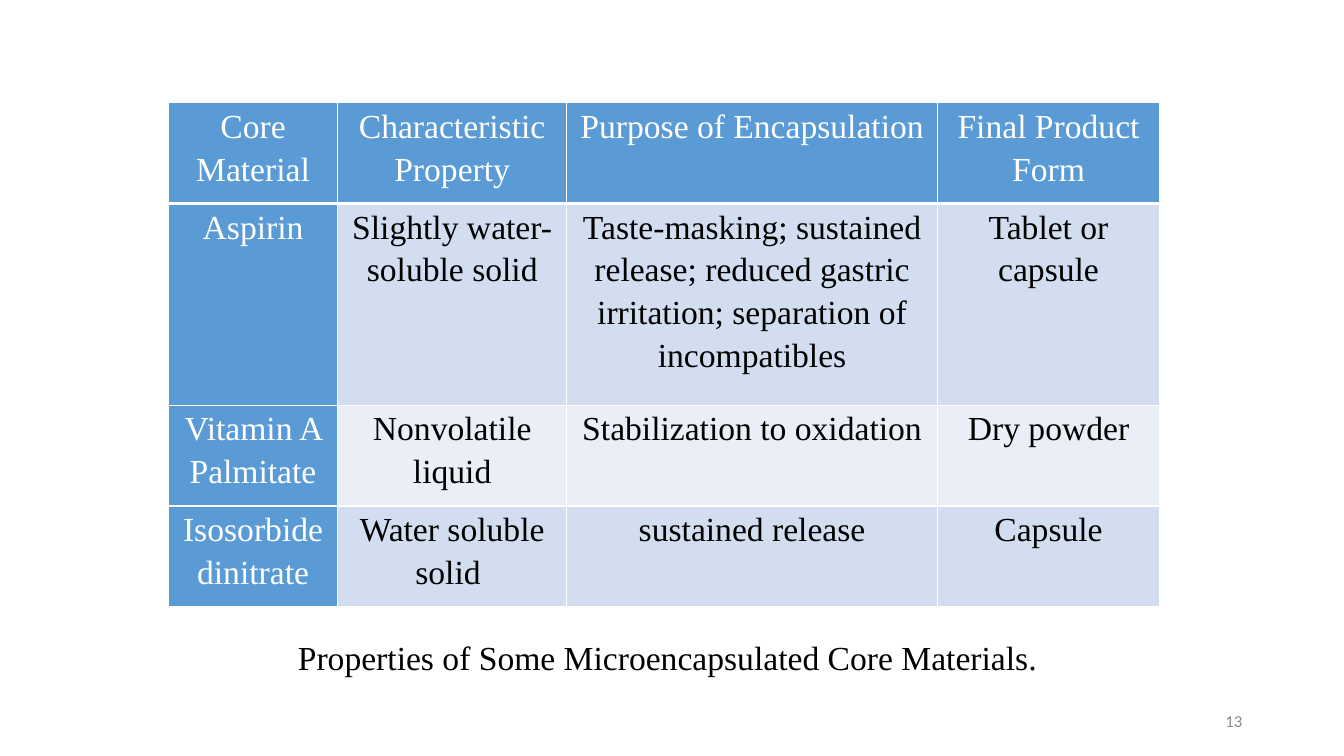
from dataclasses import dataclass

from lxml.etree import SubElement
from pptx import Presentation
from pptx.dml.color import RGBColor
from pptx.enum.text import MSO_ANCHOR, PP_ALIGN
from pptx.oxml.ns import qn
from pptx.util import Inches, Pt

COLORS = {
    "white": "FFFFFF",
    "black": "000000",
    "grey": "8C8C8C",
    "header": "5B9BD5",
    "odd_row": "D2DEEF",
    "even_row": "EAEFF7",
}
SERIF = "Times New Roman"
COLUMN_WIDTHS = [1.68, 2.27, 3.68, 2.2]
ROW_HEIGHTS = [1, 2, 1, 1]
MATERIALS = [
    ["Core Material", "Characteristic Property", "Purpose of Encapsulation", "Final Product Form"],
    [
        "Aspirin",
        "Slightly water- soluble solid",
        "Taste-masking; sustained release; reduced gastric irritation; separation of incompatibles",
        "Tablet or capsule",
    ],
    ["Vitamin A Palmitate", "Nonvolatile liquid", "Stabilization to oxidation", "Dry powder"],
    ["Isosorbide dinitrate", "Water soluble solid ", "sustained release", "Capsule"],
]


@dataclass
class Label:
    text: str
    left: float
    top: float
    width: float
    height: float
    size: float
    font: str
    color: str
    align: PP_ALIGN
    anchor: MSO_ANCHOR


LABELS = [
    Label("13", 9.42, 6.95, 3, 0.4, 12, "Calibri", "grey", PP_ALIGN.RIGHT, MSO_ANCHOR.MIDDLE),
    Label("Properties of Some Microencapsulated Core Materials.", 1.62, 6.27, 10, 0.5,
          24, SERIF, "black", PP_ALIGN.CENTER, MSO_ANCHOR.TOP),
]


def write(frame, text: str, size: float, font: str, color: str, align: PP_ALIGN):
    frame.text = text
    frame.word_wrap = True
    para = frame.paragraphs[0]
    para.alignment = align
    span = para.runs[0]
    span.font.size = Pt(size)
    span.font.name = font
    span.font.bold = False
    span.font.color.rgb = RGBColor.from_string(COLORS[color])
    return para


def add_label(page, label: Label) -> None:
    box = page.shapes.add_textbox(
        Inches(label.left), Inches(label.top), Inches(label.width), Inches(label.height)
    )
    box.text_frame.vertical_anchor = label.anchor
    write(box.text_frame, label.text, label.size, label.font, label.color, label.align)


def add_borders(cell, bottom_width: float) -> None:
    properties = cell._tc.get_or_add_tcPr()
    for side, width in (("L", 1), ("R", 1), ("T", 1), ("B", bottom_width)):
        line = SubElement(properties, qn(f"a:ln{side}"), w=str(Pt(width)))
        fill = SubElement(line, qn("a:solidFill"))
        SubElement(fill, qn("a:srgbClr"), val=COLORS["white"])


def cell_fill(row: int, column: int) -> str:
    if row == 0 or column == 0:
        return "header"
    return "odd_row" if row % 2 else "even_row"


def add_materials_table(page) -> None:
    table = page.shapes.add_table(
        len(ROW_HEIGHTS), len(COLUMN_WIDTHS), Inches(1.67), Inches(1.02),
        Inches(sum(COLUMN_WIDTHS)), Inches(sum(ROW_HEIGHTS)),
    ).table
    table.first_col = True
    for column, width in zip(table.columns, COLUMN_WIDTHS):
        column.width = Inches(width)
    for row, height in zip(table.rows, ROW_HEIGHTS):
        row.height = Inches(height)
    for row_index, texts in enumerate(MATERIALS):
        for column_index, text in enumerate(texts):
            cell = table.cell(row_index, column_index)
            fill = cell_fill(row_index, column_index)
            add_borders(cell, 3 if row_index == 0 else 1)
            cell.fill.solid()
            cell.fill.fore_color.rgb = RGBColor.from_string(COLORS[fill])
            cell.margin_left = cell.margin_right = Inches(0.07)
            cell.margin_top = cell.margin_bottom = 0
            color = "white" if fill == "header" else "black"
            para = write(cell.text_frame, text, 24, SERIF, color, PP_ALIGN.CENTER)
            para.line_spacing = 1.15


def main() -> None:
    """Build the slide on microencapsulated core materials."""
    deck = Presentation()
    deck.slide_width = Inches(13.33)
    deck.slide_height = Inches(7.5)
    page = deck.slides.add_slide(deck.slide_layouts[6])
    add_materials_table(page)
    for label in LABELS:
        add_label(page, label)
    deck.save("out.pptx")


if __name__ == "__main__":
    main()
